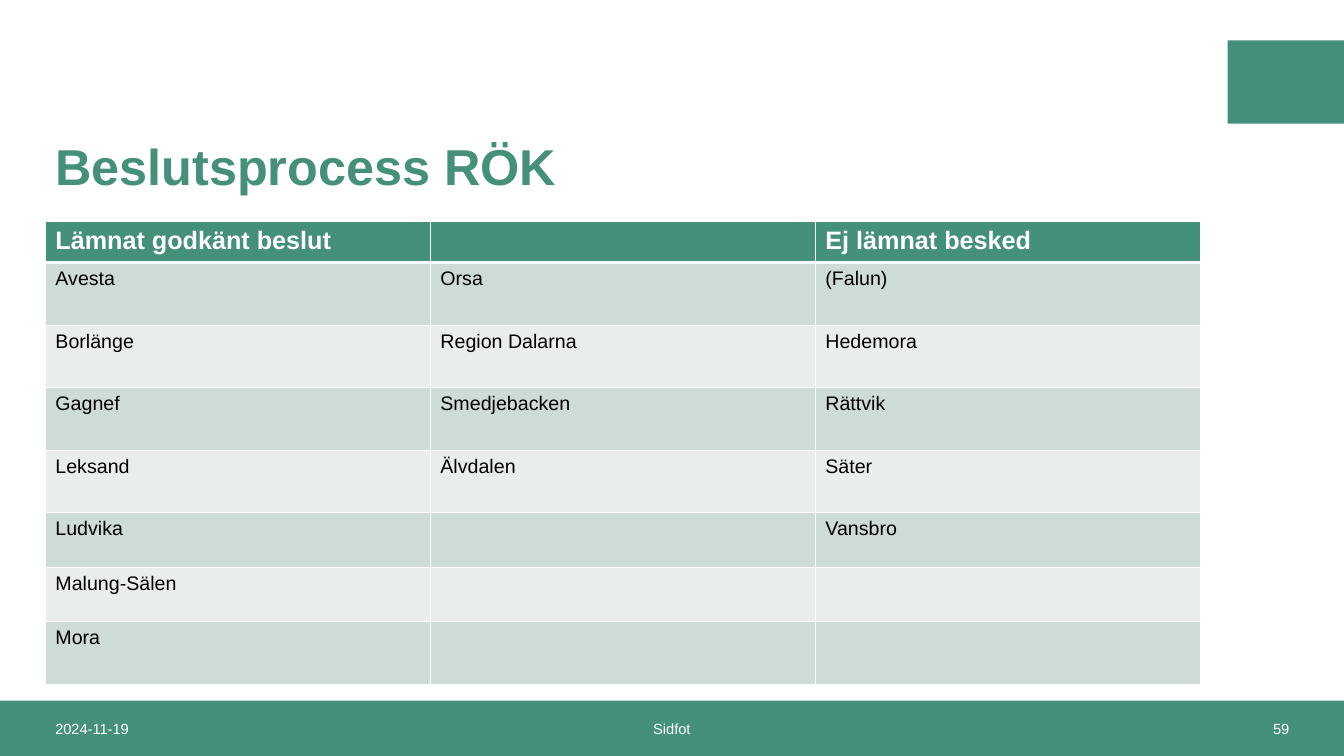
from lxml.etree import SubElement
from pptx import Presentation
from pptx.dml.color import RGBColor
from pptx.enum.shapes import MSO_SHAPE as Shape
from pptx.enum.text import MSO_ANCHOR as Anchor, PP_ALIGN as Align
from pptx.oxml.ns import qn
from pptx.util import Pt

TITLE = "Beslutsprocess RÖK"
HEADERS = ["Lämnat godkänt beslut", "", "Ej lämnat besked"]
ROWS = [
    ("Avesta", "Orsa", "(Falun)"),
    ("Borlänge", "Region Dalarna", "Hedemora"),
    ("Gagnef", "Smedjebacken", "Rättvik"),
    ("Leksand", "Älvdalen", "Säter"),
    ("Ludvika", "", "Vansbro"),
    ("Malung-Sälen", "", ""),
    ("Mora", "", ""),
]
# text, left, width, alignment
FOOTER = [
    ("2024-11-19", 32.4, 250, Align.LEFT),
    ("Sidfot", 318, 324, Align.CENTER),
    ("59", 678, 250, Align.RIGHT),
]
COLORS = {"green": "45907A", "odd": "CFDBD7", "even": "E9EEEC",
          "white": "FFFFFF", "black": "000000"}
FONT = "Arial"
SLIDE_WIDTH, SLIDE_HEIGHT = 960, 540
LEFT = 32.4
FOOTER_TOP, FOOTER_HEIGHT = 500.4, 39.6
TABLE_TOP, COLUMN_WIDTH = 158.4, 275
ROW_HEIGHTS = [27.4, 44.7, 44.7, 44.7, 44.7, 38.9, 38.9, 44.7]


def color(name):
    return RGBColor.from_string(COLORS[name])


def write(frame, text, size, color_name, bold=False, align=Align.LEFT):
    para = frame.paragraphs[0]
    para.text = text
    para.alignment = align
    for span in para.runs:
        span.font.name = FONT
        span.font.size = Pt(size)
        span.font.bold = bold
        span.font.color.rgb = color(color_name)
    return para


def add_bar(slide, left, top, width, height):
    bar = slide.shapes.add_shape(Shape.RECTANGLE, Pt(left), Pt(top), Pt(width), Pt(height))
    bar.shadow.inherit = False
    bar.fill.solid()
    bar.fill.fore_color.rgb = color("green")
    bar.line.fill.background()


def add_text(slide, left, top, width, height, *text_style, **options):
    box = slide.shapes.add_textbox(Pt(left), Pt(top), Pt(width), Pt(height))
    box.text_frame.word_wrap = True
    box.text_frame.vertical_anchor = Anchor.MIDDLE
    return write(box.text_frame, *text_style, **options)


def add_borders(cell, widths):
    """Draw white cell borders; widths maps the sides L, R, T, B to points."""
    properties = cell._tc.get_or_add_tcPr()
    for side, width in widths.items():
        line = SubElement(properties, qn(f"a:ln{side}"), w=str(Pt(width)))
        fill = SubElement(line, qn("a:solidFill"))
        SubElement(fill, qn("a:srgbClr"), val=COLORS["white"])


def add_decision_table(slide):
    rows = [HEADERS, *ROWS]
    frame = slide.shapes.add_table(
        len(rows), len(HEADERS), Pt(LEFT), Pt(TABLE_TOP),
        Pt(COLUMN_WIDTH * len(HEADERS)), Pt(sum(ROW_HEIGHTS)))
    table = frame.table
    for column in table.columns:
        column.width = Pt(COLUMN_WIDTH)
    for index, (texts, height) in enumerate(zip(rows, ROW_HEIGHTS)):
        table.rows[index].height = Pt(height)
        header = index == 0
        fill = "green" if header else "odd" if index % 2 else "even"
        size, ink = (18, "white") if header else (14, "black")
        borders = {"L": 1, "R": 1, "T": 3 if index == 1 else 1, "B": 3 if header else 1}
        for cell, text in zip(table.rows[index].cells, texts):
            add_borders(cell, borders)
            cell.fill.solid()
            cell.fill.fore_color.rgb = color(fill)
            write(cell.text_frame, text, size, ink, bold=header)


def main():
    deck = Presentation()
    deck.slide_width, deck.slide_height = Pt(SLIDE_WIDTH), Pt(SLIDE_HEIGHT)
    slide = deck.slides.add_slide(deck.slide_layouts[6])
    add_bar(slide, 876.8, 28.8, 83.2, 59.5)
    add_bar(slide, 0, FOOTER_TOP, SLIDE_WIDTH, FOOTER_HEIGHT)
    add_decision_table(slide)
    for text, left, width, align in FOOTER:
        add_text(slide, left, FOOTER_TOP, width, FOOTER_HEIGHT,
                 text, 10.5, "white", align=align)
    title = add_text(slide, LEFT, 73.4, 820, 95, TITLE, 36, "green", bold=True)
    title.line_spacing = 0.9
    deck.save("out.pptx")


if __name__ == "__main__":
    main()
